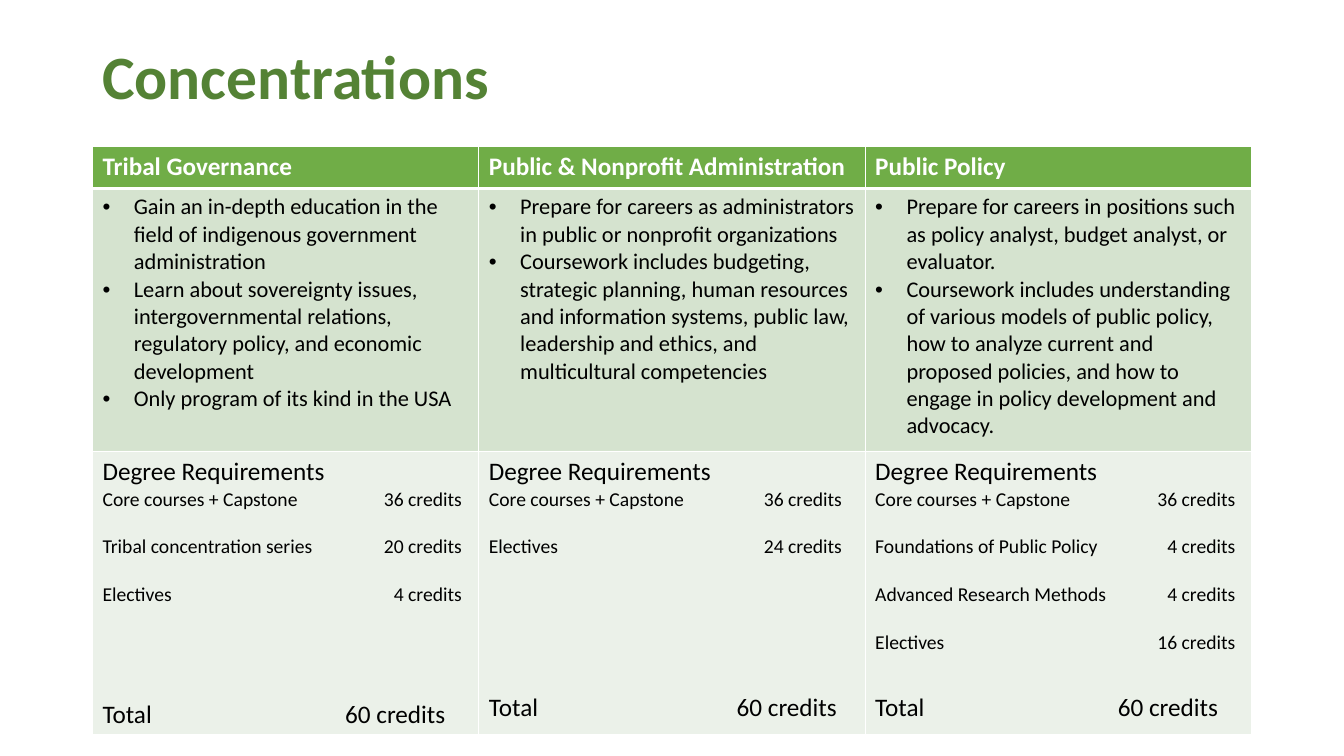
from lxml import etree
from pptx import Presentation
from pptx.dml.color import RGBColor
from pptx.enum.text import MSO_ANCHOR
from pptx.oxml.ns import qn
from pptx.util import Cm, Pt

MIDDLE = MSO_ANCHOR.MIDDLE
FONT = "Calibri"
HEAD = {"size": Pt(18), "bold": True}
BODY = {"size": Pt(16), "bold": False}
LARGE = {"size": Pt(18), "bold": False}
SMALL = {"size": Pt(14), "bold": False}
TITLE = {"size": Pt(44), "bold": True}
GAP = 17.1  # one empty line of small text, in points
ROWS = [1.06, 6.63, 7.14]
FILLS = ["70AD47", "D5E3CF", "EBF1E9"]

# Per column: name, points, courses, tab of courses, tab of total, gap over total
TRACKS = [
    ("Tribal Governance",
     ["Gain an in-depth education in the field of indigenous government administration",
      "Learn about sovereignty issues, intergovernmental relations, regulatory policy, "
      "and economic development",
      "Only program of its kind in the USA"],
     [("Core courses + Capstone", 36), ("Tribal concentration series", 20),
      ("Electives", 4)], 9.06, 8.64, 65.9),
    ("Public & Nonprofit Administration",
     ["Prepare for careers as administrators in public or nonprofit organizations",
      "Coursework includes budgeting, strategic planning, human resources and "
      "information systems, public law, leadership and ethics, and multicultural "
      "competencies"],
     [("Core courses + Capstone", 36), ("Electives", 24)], 8.9, 8.77, 95.2),
    ("Public Policy",
     ["Prepare for careers in positions such as policy analyst, budget analyst, "
      "or evaluator.",
      "Coursework includes understanding of various models of public policy, how to "
      "analyze current and proposed policies, and how to engage in policy development "
      "and advocacy."],
     [("Core courses + Capstone", 36), ("Foundations of Public Policy", 4),
      ("Advanced Research Methods", 4), ("Electives", 16)], 9.08, 8.64, 26.8),
]


def color(text):
    return RGBColor.from_string(text)


def write(frame, text, style, tone="000000", before=0):
    """Add a paragraph, using the empty first one if it is still free."""
    para = frame.paragraphs[0]
    if para.runs:
        para = frame.add_paragraph()
    para.space_before = Pt(before)
    run = para.add_run()
    run.text = text
    for key, value in {"name": FONT, **style}.items():
        setattr(run.font, key, value)
    run.font.color.rgb = color(tone)
    return para


def bullet(para):
    props = para._p.get_or_add_pPr()
    props.set("marL", str(Cm(0.79)))
    props.set("indent", str(-Cm(0.79)))
    etree.SubElement(props, qn("a:buFont"), typeface="Arial")
    etree.SubElement(props, qn("a:buChar"), char="•")


def credit(frame, name, count, style, stop, before):
    """Write a course with its credits set against a right tab."""
    para = write(frame, f"{name}\t{count} credits", style, before=before)
    tabs = etree.SubElement(para._p.get_or_add_pPr(), qn("a:tabLst"))
    etree.SubElement(tabs, qn("a:tab"), pos=str(Cm(stop)), algn="r")


def dress(cell, row):
    """Fill a cell and rule its four sides in white."""
    cell.fill.solid()
    cell.fill.fore_color.rgb = color(FILLS[row])
    widths = {"L": 1, "R": 1, "T": 3 if row == 1 else 1, "B": 3 if row == 0 else 1}
    props = cell._tc.get_or_add_tcPr()
    for spot, (side, width) in enumerate(widths.items()):
        line = etree.Element(qn(f"a:ln{side}"), w=str(Pt(width)))
        fill = etree.SubElement(line, qn("a:solidFill"))
        etree.SubElement(fill, qn("a:srgbClr"), val="FFFFFF")
        props.insert(spot, line)


def heading(slide, left, top, width, height):
    frame = slide.shapes.add_textbox(Cm(left), Cm(top), Cm(width), Cm(height)).text_frame
    frame.word_wrap = True
    frame.vertical_anchor = MIDDLE
    write(frame, "Concentrations", TITLE, "548235").line_spacing = 0.9


def grid(slide, left, top, width):
    table = slide.shapes.add_table(len(ROWS), len(TRACKS), Cm(left), Cm(top),
                                   Cm(width), Cm(sum(ROWS))).table
    table.horz_banding = False
    for row, height in enumerate(ROWS):
        table.rows[row].height = Cm(height)
    for col, (name, points, courses, stop, end, gap) in enumerate(TRACKS):
        cells = [table.cell(row, col) for row in range(len(ROWS))]
        for row, cell in enumerate(cells):
            dress(cell, row)
        top_cell, mid, low = [cell.text_frame for cell in cells]
        # Name and points
        write(top_cell, name, HEAD, "FFFFFF")
        for point in points:
            bullet(write(mid, point, BODY))
        # Degree requirements
        write(low, "Degree Requirements", LARGE)
        for spot, (course, count) in enumerate(courses):
            credit(low, course, count, SMALL, stop, GAP if spot else 0)
        credit(low, "Total", 60, LARGE, end, gap)


def main():
    deck = Presentation()
    deck.slide_width, deck.slide_height = Cm(33.87), Cm(19.05)
    slide = deck.slides.add_slide(deck.slide_layouts[6])
    heading(slide, 2.33, 0.61, 29.21, 2.8)
    grid(slide, 2.33, 3.69, 29.21)
    deck.save("out.pptx")


if __name__ == "__main__":
    main()
